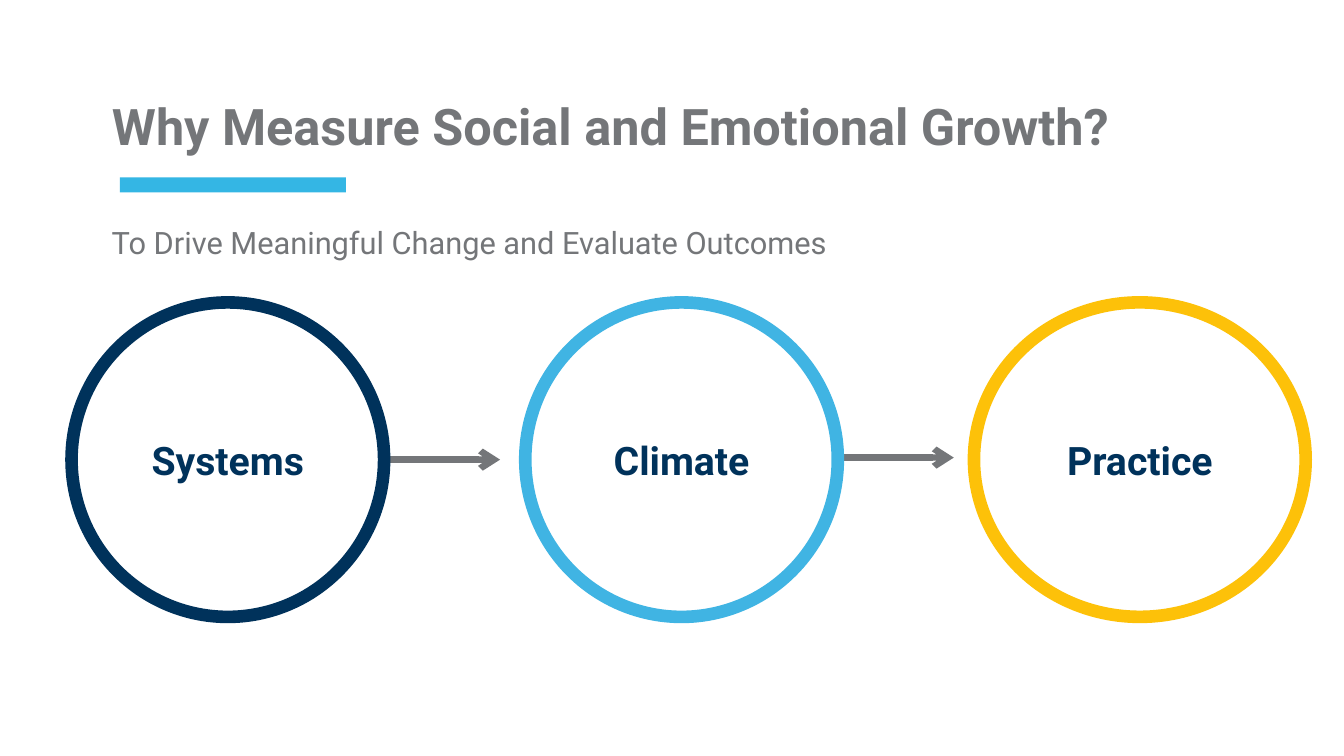
"""Build the slide on why social and emotional growth is measured."""
from dataclasses import dataclass

from lxml.etree import SubElement
from pptx import Presentation
from pptx.dml.color import RGBColor
from pptx.enum.shapes import MSO_CONNECTOR, MSO_SHAPE
from pptx.enum.text import MSO_ANCHOR, MSO_AUTO_SIZE, PP_ALIGN
from pptx.oxml.ns import qn
from pptx.slide import Slide
from pptx.text.text import TextFrame
from pptx.util import Inches, Pt

COLORS = {"gray": "747679", "accent": "34B6E4", "navy": "00325B", "sky": "40B4E3", "gold": "FDC109"}
FONT = "Roboto"
STAGE_TOP, STAGE_HEIGHT = 3, 3.12


@dataclass
class Stage:
    """A circle naming one stage."""
    label: str
    left: float
    width: float
    color: str


@dataclass
class Step:
    """An arrow leading from one stage to the next."""
    start: float
    end: float
    height: float


STAGES = [
    Stage("Systems", 0.71, 3.1, "navy"),
    Stage("Climate", 5.21, 3.1, "sky"),
    Stage("Practice", 9.66, 3.29, "gold"),
]
STEPS = [Step(3.82, 4.96, 4.56), Step(8.31, 9.46, 4.54)]


def rgb(color: str) -> RGBColor:
    """Look up a named colour."""
    return RGBColor.from_string(COLORS[color])


def write(frame: TextFrame, text: str, size: int, color: str, bold: bool,
          align: PP_ALIGN, anchor: MSO_ANCHOR, inset: float) -> None:
    """Fill a frame with one formatted line of text."""
    frame.text = text
    frame.word_wrap = True
    frame.vertical_anchor = anchor
    frame.margin_left = frame.margin_right = Inches(0.1)
    frame.margin_top = frame.margin_bottom = Inches(inset)
    paragraph = frame.paragraphs[0]
    paragraph.alignment = align
    font = paragraph.runs[0].font
    font.name, font.size, font.bold = FONT, Pt(size), bold
    font.color.rgb = rgb(color)


def add_heading(slide: Slide) -> None:
    """Add the title, its accent bar and the subtitle."""
    bar = slide.shapes.add_shape(
        MSO_SHAPE.RECTANGLE, Inches(1.19), Inches(1.76), Inches(2.24), Inches(0.15))
    bar.shadow.inherit = False
    bar.fill.solid()
    bar.fill.fore_color.rgb = rgb("accent")
    bar.line.fill.background()

    title = slide.shapes.title
    title.left, title.top = Inches(1.01), Inches(0.92)
    title.width, title.height = Inches(11.32), Inches(0.72)
    write(title.text_frame, "Why Measure Social and Emotional Growth?", 36, "gray", True,
          PP_ALIGN.LEFT, MSO_ANCHOR.BOTTOM, 0.1)
    title.text_frame.auto_size = MSO_AUTO_SIZE.NONE

    subtitle = slide.shapes.add_textbox(Inches(1.01), Inches(2.17), Inches(10.29), Inches(0.47))
    write(subtitle.text_frame, "To Drive Meaningful Change and Evaluate Outcomes", 22, "gray", False,
          PP_ALIGN.LEFT, MSO_ANCHOR.TOP, 0.05)
    subtitle.text_frame.auto_size = MSO_AUTO_SIZE.SHAPE_TO_FIT_TEXT


def add_step(slide: Slide, step: Step) -> None:
    """Draw the arrow of one step."""
    arrow = slide.shapes.add_connector(
        MSO_CONNECTOR.STRAIGHT, Inches(step.start), Inches(step.height),
        Inches(step.end), Inches(step.height))
    arrow.line.color.rgb = rgb("gray")
    arrow.line.width = Pt(4.5)
    properties = arrow.element.spPr
    SubElement(properties.find(qn("a:ln")), qn("a:tailEnd"), type="arrow")
    SubElement(properties, qn("a:effectLst"))


def add_stage(slide: Slide, stage: Stage) -> None:
    """Draw the labelled circle of one stage."""
    circle = slide.shapes.add_shape(
        MSO_SHAPE.OVAL, Inches(stage.left), Inches(STAGE_TOP),
        Inches(stage.width), Inches(STAGE_HEIGHT))
    circle.shadow.inherit = False
    circle.fill.background()
    circle.line.color.rgb = rgb(stage.color)
    circle.line.width = Pt(9)
    write(circle.text_frame, stage.label, 28, "navy", True,
          PP_ALIGN.CENTER, MSO_ANCHOR.MIDDLE, 0.1)


def main() -> None:
    """Build and save the presentation."""
    presentation = Presentation()
    presentation.slide_width, presentation.slide_height = Inches(13.33), Inches(7.5)
    slide = presentation.slides.add_slide(presentation.slide_layouts.get_by_name("Title Only"))
    add_heading(slide)
    for step in STEPS:
        add_step(slide, step)
    for stage in STAGES:
        add_stage(slide, stage)
    presentation.save("out.pptx")


if __name__ == "__main__":
    main()
